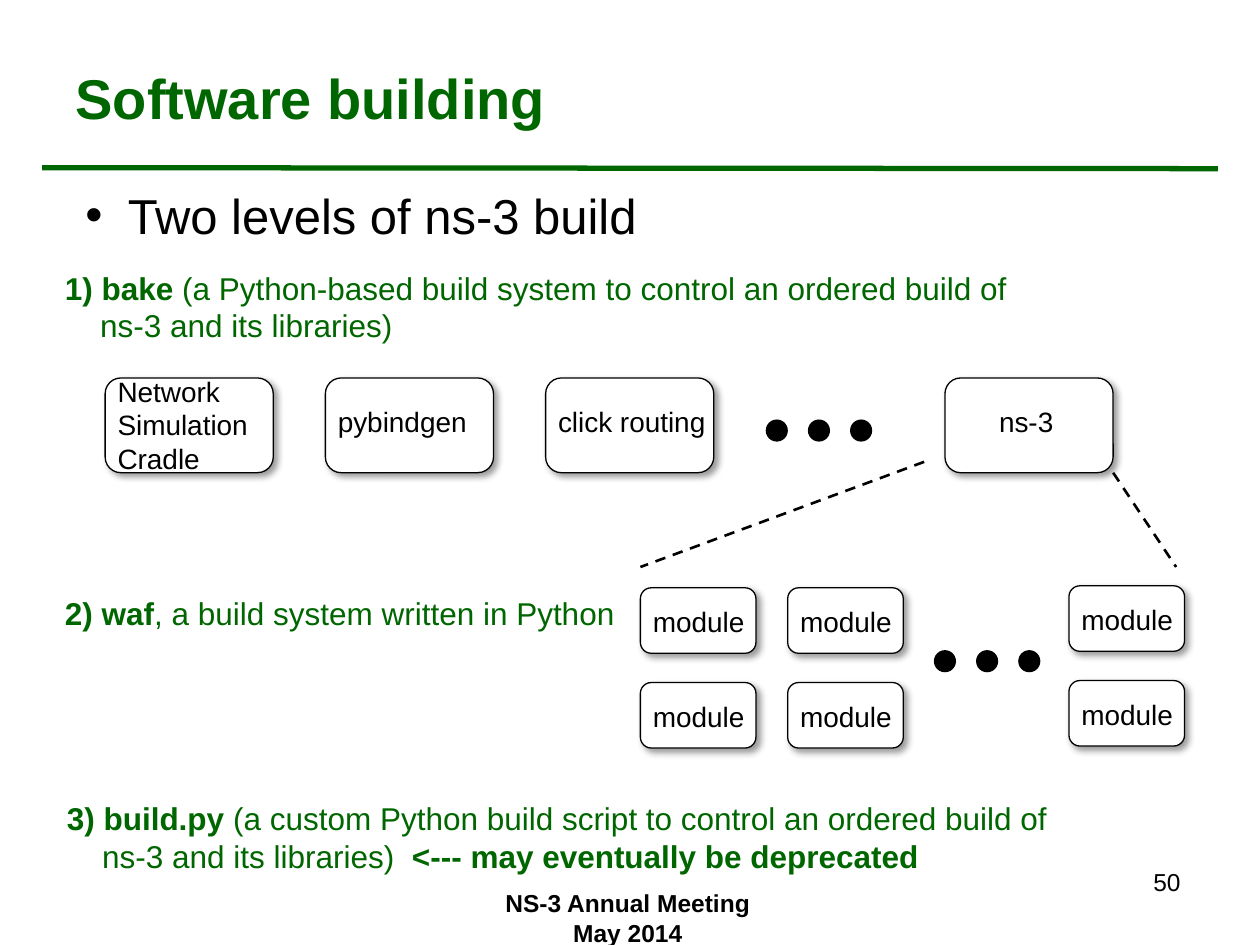
import pptx
import pptx.dml.color
import pptx.enum.dml
import pptx.enum.shapes
import pptx.enum.text
import pptx.oxml
import pptx.oxml.ns
import pptx.util

Cm = pptx.util.Cm
Pt = pptx.util.Pt
RGB = pptx.dml.color.RGBColor
SHAPE = pptx.enum.shapes.MSO_SHAPE
ALIGN = pptx.enum.text.PP_ALIGN
ANCHOR = pptx.enum.text.MSO_ANCHOR

GREEN = RGB(0x00, 0x66, 0x00)
BLACK = RGB(0x00, 0x00, 0x00)
WHITE = RGB(0xFF, 0xFF, 0xFF)

NS = pptx.oxml.ns.nsdecls("a")
SHADE = (f'<a:effectLst {NS}><a:outerShdw blurRad="50800" dist="38100" '
         'dir="2700000" algn="tl" rotWithShape="0"><a:srgbClr val="000000">'
         '<a:alpha val="40000"/></a:srgbClr></a:outerShdw></a:effectLst>')
PLAIN = f"<a:effectLst {NS}/>"
BULLET = (f'<a:buClr {NS}><a:srgbClr val="000000"/></a:buClr>',
          f'<a:buFont {NS} typeface="Arial"/>',
          f'<a:buChar {NS} char="•"/>')


def style(font, color=BLACK, **values):
    for name, value in {"name": "Arial", **values}.items():
        setattr(font, name, value)
    font.color.rgb = color


def write(frame, lines, size, color=BLACK, align=ALIGN.LEFT, indent=0):
    """Fill a frame; each line is a list of (text, bold) runs, later lines indented."""
    for i, line in enumerate(lines):
        para = frame.paragraphs[0] if i == 0 else frame.add_paragraph()
        para.alignment = align
        if i and indent:
            para._p.get_or_add_pPr().set("marL", str(Cm(indent)))
        for text, bold in line:
            run = para.add_run()
            run.text = text
            style(run.font, color, size=Pt(size), bold=bold)


def add_text(shapes, at, lines, size, wrap=False, **look):
    box = shapes.add_textbox(*map(Cm, at))
    box.text_frame.word_wrap = wrap
    write(box.text_frame, lines, size, **look)
    return box


def add_shape(shapes, kind, at, fill, effect=PLAIN):
    shape = shapes.add_shape(kind, *map(Cm, at))
    shape.fill.solid()
    shape.fill.fore_color.rgb = fill
    shape.line.color.rgb = BLACK
    shape.line.width = Pt(0.75)
    shape._element.spPr.append(pptx.oxml.parse_xml(effect))


def add_box(shapes, at):
    add_shape(shapes, SHAPE.FLOWCHART_ALTERNATE_PROCESS, at, WHITE, SHADE)


def add_dots(shapes, left, top):
    for i in range(3):
        add_shape(shapes, SHAPE.OVAL, (left + i * 0.85, top, 0.42, 0.42), BLACK)


def add_line(shapes, ends, color, width, dash=None):
    kind = pptx.enum.shapes.MSO_CONNECTOR.STRAIGHT
    line = shapes.add_connector(kind, *map(Cm, ends))
    line.line.color.rgb = color
    line.line.width = Pt(width)
    if dash:
        line.line.dash_style = dash
    line._element.spPr.append(pptx.oxml.parse_xml(PLAIN))


def add_title(slide):
    title = slide.shapes.title
    place = {"left": 1.27, "top": 0.76, "width": 22.78, "height": 2.39}
    for name, value in place.items():
        setattr(title, name, Cm(value))
    title.text_frame.vertical_anchor = ANCHOR.MIDDLE
    write(title.text_frame, [[("Software building", True)]], 32, GREEN)


def add_lead(shapes):
    box = add_text(shapes, (1.47, 3.61, 22.78, 13.54), [], 28, wrap=True)
    props = box.text_frame.paragraphs[0]._p.get_or_add_pPr()
    props.set("marL", str(Cm(0.86)))
    props.set("indent", str(-Cm(0.86)))
    for mark in BULLET:
        props.append(pptx.oxml.parse_xml(mark))
    write(box.text_frame, [[("Two levels of ns-3 build", False)]], 28)


def add_parts(shapes):
    """Draw the row of packages that bake builds."""
    parts = [
        (19.05, (19.89, 8.04, 1.63, 0.94), ["ns-3"], False),
        (11, (11, 8.04, 3.53, 0.94), ["click routing"], False),
        (2.12, (2.12, 7.42, 3.6, 2.31), ["Network", "Simulation", "Cradle"], True),
        (6.56, (6.56, 8.04, 3.6, 0.94), ["pybindgen"], True),
    ]
    for left, at, words, wrap in parts:
        add_box(shapes, (left, 7.62, 3.39, 1.91))
        add_text(shapes, at, [[(word, False)] for word in words], 16, wrap)
    add_dots(shapes, 15.45, 8.47)


def add_modules(shapes):
    """Draw the grid of modules that make up ns-3."""
    group = shapes.add_group_shape().shapes
    for left, top in ((12.91, 11.85), (15.88, 11.85), (21.55, 11.81)):
        for row in range(2):
            y = top + row * 1.91
            add_box(group, (left, y, 2.33, 1.32))
            add_text(group, (left, y + 0.21, 2.39, 0.94), [[("module", False)]], 16)
    add_dots(group, 18.84, 13.12)


def add_steps(shapes):
    steps = [
        ((1.06, 5.29, 20.6, 1.8), [
            [("1) bake", True),
             (" (a Python-based build system to control an ordered build of", False)],
            [("ns-3 and its libraries)", False)]]),
        ((1.06, 11.85, 11.63, 1.02), [
            [("2) waf", True), (", a build system written in Python", False)]]),
        ((1.1, 15.98, 20.65, 1.8), [
            [("3) build.py", True),
             (" (a custom Python build script to control an ordered build of", False)],
            [("ns-3 and its libraries)  ", False),
             ("<--- may eventually be deprecated", True)]]),
    ]
    for at, lines in steps:
        add_text(shapes, at, lines, 18, color=GREEN, indent=0.71)


def main():
    deck = pptx.Presentation()
    deck.slide_width, deck.slide_height = Cm(25.4), Cm(19.05)
    slide = deck.slides.add_slide(deck.slide_layouts[5])
    shapes = slide.shapes

    add_line(shapes, (0.85, 3.38, 24.55, 3.4), GREEN, 3)
    add_title(slide)
    add_lead(shapes)
    add_text(shapes, (8.68, 17.78, 7.95, 1.27),
             [[("NS-3 Annual Meeting", True)], [("May 2014", True)]],
             14, wrap=True, align=ALIGN.CENTER)
    add_text(shapes, (18.21, 17.36, 5.84, 1.3), [[("50", False)]],
             14, wrap=True, align=ALIGN.RIGHT)
    add_parts(shapes)
    add_modules(shapes)
    dash = pptx.enum.dml.MSO_LINE.DASH
    for ends in ((18.63, 9.31, 12.91, 11.43), (22.44, 9.53, 23.71, 11.43)):
        add_line(shapes, ends, BLACK, 1.5, dash)
    add_steps(shapes)
    deck.save("out.pptx")


if __name__ == "__main__":
    main()
